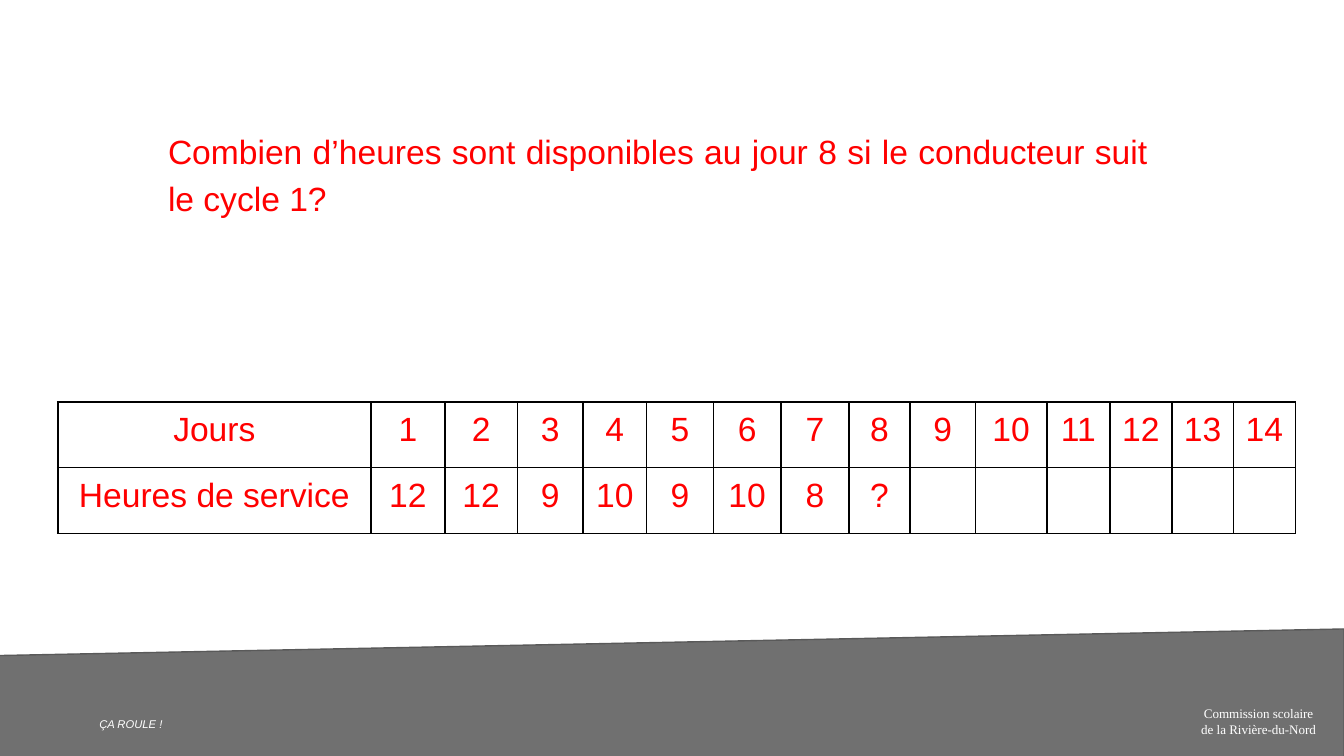
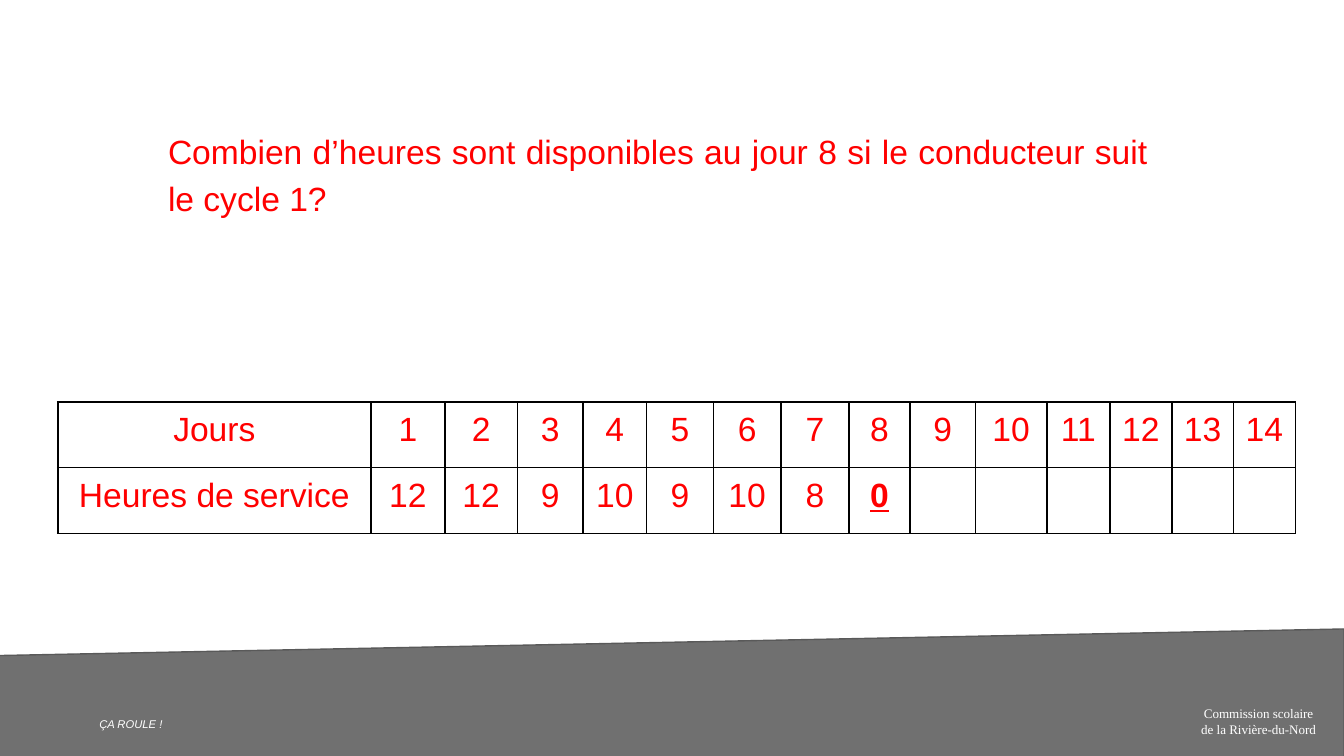
"""Build two slides asking how many service hours remain on day 8 of cycle 1."""
from dataclasses import dataclass

from lxml.etree import SubElement
from pptx import Presentation
from pptx.dml.color import RGBColor
from pptx.enum.shapes import MSO_SHAPE as SHAPE
from pptx.enum.text import MSO_ANCHOR as ANCHOR, MSO_AUTO_SIZE as AUTO, PP_ALIGN as ALIGN
from pptx.oxml.ns import qn
from pptx.util import Inches, Pt

BLACK = RGBColor(0x00, 0x00, 0x00)
WHITE = RGBColor(0xFF, 0xFF, 0xFF)
RED = RGBColor(0xFF, 0x00, 0x00)
GRAY = RGBColor(0x59, 0x59, 0x59)
SANS, SERIF = "Arial", "Times New Roman"
WIDTH = Inches(10)
HEIGHT = WIDTH * 9 // 16
BAND_ALPHA = 56
TITLE_ONLY = 5

QUESTION = "Combien d’heures sont disponibles au jour 8 si le conducteur suit le cycle 1?"
DAYS = 14
HOURS = ["12", "12", "9", "10", "9", "10", "8"]
COLUMN_SHARES = [23.3, 5.5, 5.4, 4.9, 4.7, 5, 5, 5.1, 4.5, 4.9, 5.3, 4.7, 4.6, 4.6, 4.6]


@dataclass(frozen=True)
class Box:
    """A place given in percent of the slide's width and height."""
    x: float
    y: float
    w: float
    h: float

    def emu(self) -> tuple[int, int, int, int]:
        """Return left, top, width and height in EMU."""
        return (across(self.x), down(self.y), across(self.w), down(self.h))


@dataclass(frozen=True)
class Footer:
    """A small text on the footer band."""
    box: Box
    lines: tuple[str, ...]
    size: float
    name: str
    align: ALIGN = ALIGN.LEFT
    italic: bool = False


@dataclass(frozen=True)
class Answer:
    """The entry shown for day 8."""
    text: str
    strong: bool = False


BAND_BOX = Box(-0.2, 83.2, 100.2, 17.6)
QUESTION_BOX = Box(11.5, 14.76, 74.9, 15.11)
TABLE_BOX = Box(4.3, 53.16, sum(COLUMN_SHARES), 17.42)
FOOTERS = [
    Footer(Box(87.3, 91.56, 12.7, 5.33), ("Commission scolaire", "de la Rivière-du-Nord"),
           7, SERIF, align=ALIGN.CENTER),
    Footer(Box(6.4, 93.16, 8.1, 5.16), ("ÇA ROULE !",), 6, SANS, italic=True),
]
ANSWERS = [Answer("?"), Answer("0", strong=True)]


def across(share: float) -> int:
    """Convert a percentage of the slide's width to EMU."""
    return round(WIDTH * share / 100)


def down(share: float) -> int:
    """Convert a percentage of the slide's height to EMU."""
    return round(HEIGHT * share / 100)


def write(tf, *lines: str, size: float = 18, name: str = SANS, color: RGBColor = RED,
          align: ALIGN = ALIGN.CENTER, spacing: float = 1.0, bold: bool = False,
          italic: bool = False, underline: bool = False) -> None:
    """Write each line as a formatted paragraph."""
    for i, line in enumerate(lines):
        p = tf.add_paragraph() if i else tf.paragraphs[0]
        p.alignment, p.line_spacing, p.space_before = align, spacing, Pt(0)
        r = p.add_run()
        r.text = line
        font = r.font
        font.size, font.name, font.color.rgb = Pt(size), name, color
        font.bold, font.italic, font.underline = bold, italic, underline


def set_frame(tf) -> None:
    """Give a text frame equal insets, wrapping and a top anchor."""
    tf.word_wrap, tf.auto_size, tf.vertical_anchor = True, AUTO.NONE, ANCHOR.TOP
    tf.margin_left = tf.margin_top = tf.margin_right = tf.margin_bottom = Inches(0.1)


def add_band(slide) -> None:
    """Draw the slanted translucent band."""
    sp = slide.shapes.add_shape(SHAPE.FLOWCHART_MANUAL_INPUT, *BAND_BOX.emu())
    sp.shadow.inherit = False
    sp.fill.solid()
    sp.fill.fore_color.rgb = BLACK
    rgb = next(sp.fill._xPr.iter(qn("a:srgbClr")))
    SubElement(rgb, qn("a:alpha"), val=str(BAND_ALPHA * 1000))
    sp.line.color.rgb = GRAY
    sp.line.width = Pt(0.75)


def add_footer(slide, footer: Footer) -> None:
    """Draw one footer text."""
    tf = slide.shapes.add_textbox(*footer.box.emu()).text_frame
    set_frame(tf)
    write(tf, *footer.lines, size=footer.size, name=footer.name, color=WHITE,
          align=footer.align, italic=footer.italic)


def add_question(slide) -> None:
    """Place the question in the title placeholder."""
    sp = slide.shapes.title
    sp.left, sp.top, sp.width, sp.height = QUESTION_BOX.emu()
    set_frame(sp.text_frame)
    write(sp.text_frame, QUESTION, align=ALIGN.JUSTIFY, spacing=1.15)


def style_cell(cell) -> None:
    """Clear a cell's fill and give it insets and black borders."""
    cell.margin_left = cell.margin_top = cell.margin_right = cell.margin_bottom = Inches(0.07)
    cell.vertical_anchor = ANCHOR.TOP
    props = cell._tc.get_or_add_tcPr()
    for side in ("lnL", "lnR", "lnT", "lnB"):
        ln = SubElement(props, qn(f"a:{side}"), w=str(Pt(1)))
        fill = SubElement(ln, qn("a:solidFill"))
        SubElement(fill, qn("a:srgbClr"), val=str(BLACK))
    cell.fill.background()


def add_hours_table(slide, answer: Answer) -> None:
    """Draw the table of days and service hours."""
    blanks = [""] * (DAYS - len(HOURS) - 1)
    rows = [["Jours", *map(str, range(1, DAYS + 1))],
            ["Heures de service", *HOURS, answer.text, *blanks]]
    table = slide.shapes.add_table(len(rows), DAYS + 1, *TABLE_BOX.emu()).table
    table.first_row = table.horz_banding = False
    for column, share in zip(table.columns, COLUMN_SHARES):
        column.width = across(share)
    for i, row in enumerate(rows):
        for j, text in enumerate(row):
            cell = table.cell(i, j)
            style_cell(cell)
            if text:
                strong = answer.strong and (i, j) == (1, len(HOURS) + 1)
                write(cell.text_frame, text, bold=strong, underline=strong)


def add_slide(prs, answer: Answer) -> None:
    """Add one slide with the band, footers, table and question."""
    slide = prs.slides.add_slide(prs.slide_layouts[TITLE_ONLY])
    slide.background.fill.solid()
    slide.background.fill.fore_color.rgb = WHITE
    add_band(slide)
    for footer in FOOTERS:
        add_footer(slide, footer)
    add_hours_table(slide, answer)
    add_question(slide)


def main() -> None:
    """Build and save the presentation."""
    prs = Presentation()
    prs.slide_width, prs.slide_height = WIDTH, HEIGHT
    for answer in ANSWERS:
        add_slide(prs, answer)
    prs.save("out.pptx")


if __name__ == "__main__":
    main()
